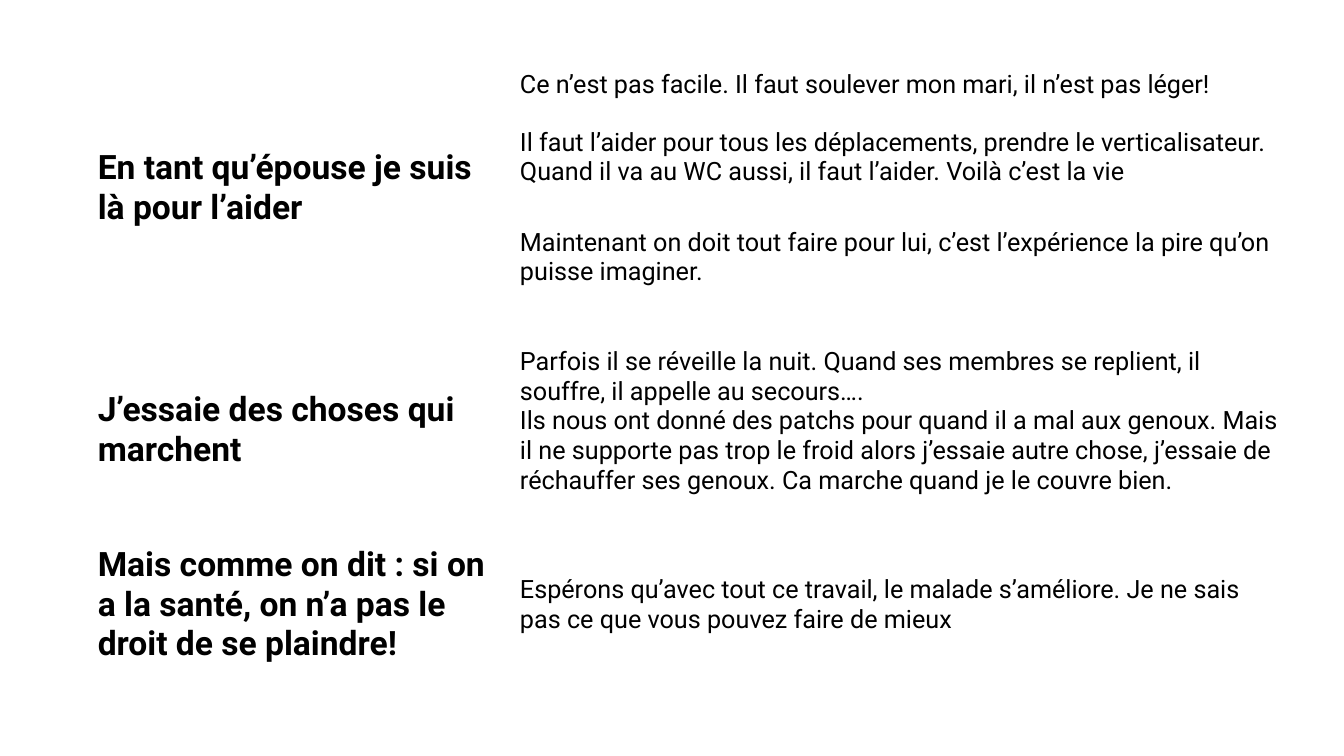
import pptx
import pptx.dml.color
import pptx.enum.text
import pptx.util

Cm = pptx.util.Cm
BLACK = pptx.dml.color.RGBColor(0x00, 0x00, 0x00)
MIDDLE = pptx.enum.text.MSO_ANCHOR.MIDDLE
TOP = pptx.enum.text.MSO_ANCHOR.TOP

COL_WIDTHS = [10.64, 19.79]
ROW_HEIGHTS = [1.47, 2.51, 2.18, 4.42, 4.39]

# Each theme: title, anchor of its quotes, and one list of paragraphs per row
THEMES = [
    ("En tant qu’épouse je suis là pour l’aider", TOP, [
        ["Ce n’est pas facile. Il faut soulever mon mari, il n’est pas léger!"],
        ["Il faut l’aider pour tous les déplacements, prendre le verticalisateur. "
         "Quand il va au WC aussi, il faut l’aider. Voilà c’est la vie"],
        ["Maintenant on doit tout faire pour lui, c’est l’expérience la pire "
         "qu’on puisse imaginer."],
    ]),
    ("J’essaie des choses qui marchent", TOP, [
        ["Parfois il se réveille la nuit. Quand ses membres se replient, il "
         "souffre, il appelle au secours….",
         "Ils nous ont donné des patchs pour quand il a mal aux genoux. Mais il "
         "ne supporte pas trop le froid alors j’essaie autre chose, j’essaie de "
         "réchauffer ses genoux. Ca marche quand je le couvre bien."],
    ]),
    ("Mais comme on dit : si on a la santé, on n’a pas le droit de se plaindre!",
     MIDDLE, [
        ["Espérons qu’avec tout ce travail, le malade s’améliore. Je ne sais "
         "pas ce que vous pouvez faire de mieux"],
    ]),
]


def write(cell, paragraphs, size=18, bold=False, anchor=TOP):
    cell.vertical_anchor = anchor
    tf = cell.text_frame
    for i, text in enumerate(paragraphs):
        p = tf.paragraphs[0] if i == 0 else tf.add_paragraph()
        r = p.add_run()
        r.text = text
        r.font.name = "Roboto"
        r.font.size = pptx.util.Pt(size)
        r.font.bold = bold
        r.font.color.rgb = BLACK


def add_quote_table(s, left, top, width, height):
    table = s.shapes.add_table(len(ROW_HEIGHTS), len(COL_WIDTHS),
                               left, top, width, height).table
    table.first_row = table.horz_banding = False
    for column, share in zip(table.columns, COL_WIDTHS):
        column.width = int(width * share / sum(COL_WIDTHS))
    for row, share in zip(table.rows, ROW_HEIGHTS):
        row.height = int(height * share / sum(ROW_HEIGHTS))
    for cell in table.iter_cells():
        cell.fill.background()

    first = 0
    for title, anchor, quotes in THEMES:
        last = first + len(quotes) - 1
        title_cell = table.cell(first, 0)
        if last > first:
            title_cell.merge(table.cell(last, 0))
            title_cell.margin_bottom = Cm(0.9)
        write(title_cell, [title], size=24, bold=True, anchor=MIDDLE)
        for i, paragraphs in enumerate(quotes, first):
            write(table.cell(i, 1), paragraphs, anchor=anchor)
        first = last + 1


def main():
    prs = pptx.Presentation()
    prs.slide_width, prs.slide_height = Cm(33.87), Cm(19.05)
    s = prs.slides.add_slide(prs.slide_layouts[6])
    add_quote_table(s, Cm(2.21), Cm(1.63),
                    Cm(sum(COL_WIDTHS)), Cm(sum(ROW_HEIGHTS)))
    prs.save("out.pptx")


if __name__ == "__main__":
    main()
